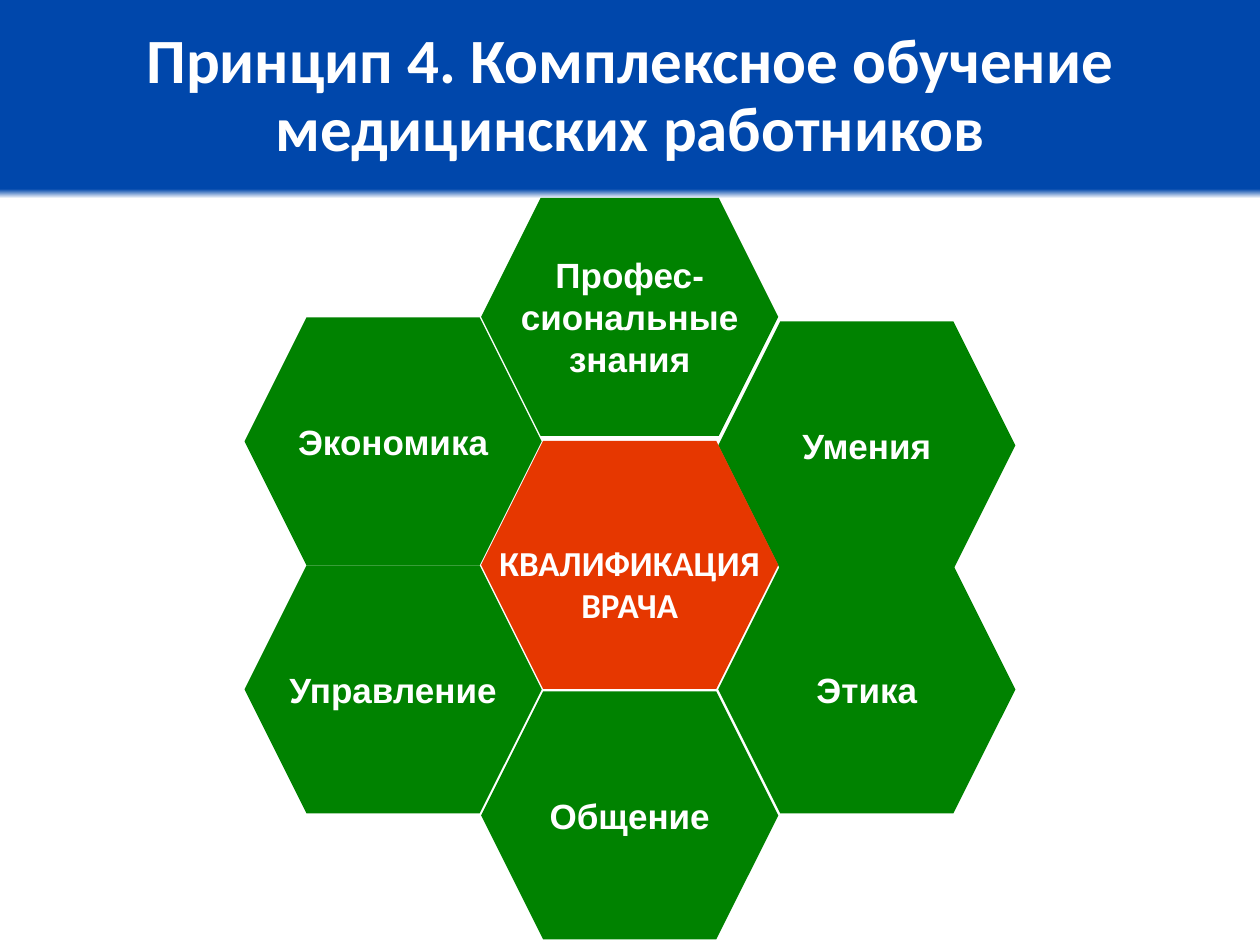
from copy import deepcopy

from pptx import Presentation
from pptx.dml.color import RGBColor
from pptx.enum.shapes import MSO_SHAPE as Preset
from pptx.enum.text import MSO_ANCHOR as Anchor, PP_ALIGN as Align
from pptx.oxml.ns import qn
from pptx.util import Cm, Pt

COLORS = {
    "header": "0047AB",
    "page": "FFFFFF",
    "text": "FFFFFF",
    "petal": "008200",
    "core": "E63700",
}
HEX_WIDTH, HEX_HEIGHT = 5.99, 5.0
LEFT, MIDDLE, RIGHT = 4.93, 9.7, 14.48

# label, left, top, hexagon height, label width, label height
PETALS = [
    ("Управление", LEFT, 11.4, HEX_HEIGHT, 4.72, 1.12),
    ("Этика", RIGHT, 11.4, HEX_HEIGHT, 4.37, 1.17),
    ("Умения", RIGHT, 6.48, HEX_HEIGHT, 3.61, 1.12),
    ("Общение", MIDDLE, 13.94, HEX_HEIGHT, 3.76, 1.12),
    ("Профес-сиональные знания", MIDDLE, 3.99, 4.8, 5.0, 2.82),
    ("Экономика", LEFT, 6.4, HEX_HEIGHT, 4.39, 1.12),
]


def color(name):
    return RGBColor.from_string(COLORS[name])


def paint_background(slide):
    """Blue header band that turns sharply into the white page."""
    fill = slide.background.fill
    fill.gradient()
    fill.gradient_angle = 270
    stop_list = fill.gradient_stops[0]._gs.getparent()
    first_stop = stop_list.findall(qn("a:gs"))[0]
    for _ in range(4 - len(fill.gradient_stops)):
        stop_list.append(deepcopy(first_stop))
    bands = [(0, "header"), (0.2, "header"), (0.21, "page"), (1, "page")]
    for stop, (position, name) in zip(fill.gradient_stops, bands):
        stop.position = position
        stop.color.rgb = color(name)


def add_label(slide, lines, left, top, width, height, size=20, font="Arial", spacing=None):
    frame = slide.shapes.add_textbox(Cm(left), Cm(top), Cm(width), Cm(height)).text_frame
    frame.word_wrap = True
    frame.vertical_anchor = Anchor.MIDDLE
    for index, line in enumerate(lines):
        paragraph = frame.add_paragraph() if index else frame.paragraphs[0]
        paragraph.alignment = Align.CENTER
        paragraph.line_spacing = spacing
        run = paragraph.add_run()
        run.text = line
        run.font.name = font
        run.font.size = Pt(size)
        run.font.bold = True
        run.font.color.rgb = color("text")


def add_cell(slide, lines, left, top, height, label_width, label_height,
             fill="petal", font="Arial", label_drop=0):
    """Hexagon with a label centred on it, lowered by label_drop."""
    hexagon = slide.shapes.add_shape(
        Preset.HEXAGON, Cm(left), Cm(top), Cm(HEX_WIDTH), Cm(height))
    hexagon.shadow.inherit = False
    hexagon.fill.solid()
    hexagon.fill.fore_color.rgb = color(fill)
    hexagon.line.fill.background()
    label_left = left + (HEX_WIDTH - label_width) / 2
    label_top = top + (height - label_height) / 2 + label_drop
    add_label(slide, lines, label_left, label_top, label_width, label_height, font=font)


def main():
    deck = Presentation()
    deck.slide_width, deck.slide_height = Cm(25.4), Cm(19.05)
    slide = deck.slides.add_slide(deck.slide_layouts[6])
    paint_background(slide)
    add_label(slide, ["Принцип 4. Комплексное обучение медицинских работников"],
              0.1, 0.36, 25.2, 3.18, size=36, font="Calibri", spacing=0.9)
    for label, *geometry in PETALS:
        add_cell(slide, [label], *geometry)
    add_cell(slide, ["КВАЛИФИКАЦИЯ", "ВРАЧА"], MIDDLE, 8.89, HEX_HEIGHT, 5.8, 1.12,
             fill="core", font="Calibri", label_drop=0.37)
    deck.save("out.pptx")


if __name__ == "__main__":
    main()
